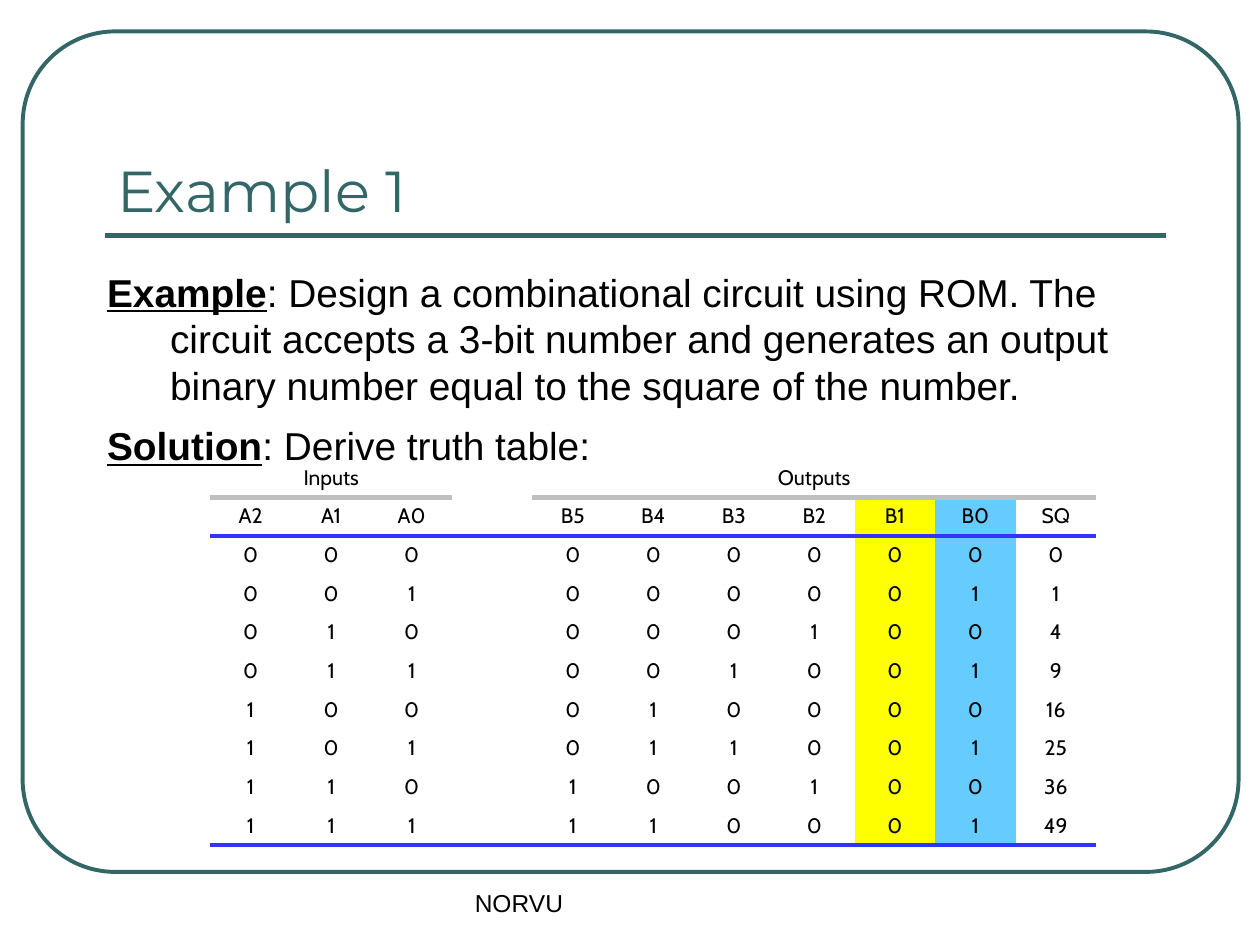
from lxml import etree
from pptx import Presentation
from pptx import util as u
from pptx.dml.color import RGBColor
from pptx.enum import shapes, text
from pptx.oxml import ns

TEAL, BLACK, BLUE, GREY = "336666", "000000", "3333FF", "C0C0C0"
COLUMN_FILLS = {8: "FFFF00", 9: "66CCFF"}
HEADINGS = ["A2", "A1", "A0", "", "B5", "B4", "B3", "B2", "B1", "B0", "SQ"]
BODY = [
    ("Example", ": Design a combinational circuit using ROM. The circuit accepts a 3-bit "
     "number and generates an output binary number equal to the square of the number."),
    ("Solution", ": Derive truth table:"),
]


def color(value):
    """Turn a hex string into a colour."""
    return RGBColor.from_string(value)


def apply_format(target, formats):
    """Set each attribute of a target from a dict."""
    for name, value in formats.items():
        setattr(target, name, value)


def place(shape, box):
    """Move a shape to a box given in inches."""
    names = ("left", "top", "width", "height")
    apply_format(shape, dict(zip(names, map(u.Inches, box))))


def add_run(paragraph, words, size, font, hex_color, **formats):
    """Add one formatted run to a paragraph."""
    run = paragraph.add_run()
    run.text = words
    apply_format(run.font, {"size": u.Pt(size), "name": font, **formats})
    run.font.color.rgb = color(hex_color)


def set_frame(shape, anchor):
    """Give a text shape wrapping, fixed size and an anchor."""
    apply_format(shape.text_frame, {
        "word_wrap": True, "auto_size": text.MSO_AUTO_SIZE.NONE, "vertical_anchor": anchor})
    return shape.text_frame


def add_backdrop(slide, box):
    """Draw the rounded frame and the rule under the title, behind the text."""
    frame = slide.shapes.add_shape(
        shapes.MSO_SHAPE.ROUNDED_RECTANGLE, *map(u.Inches, box))
    frame.adjustments[0] = 0.11
    frame.shadow.inherit = False
    frame.fill.background()
    left, top = box[0] + 0.65, box[1] + 1.62
    rule = slide.shapes.add_connector(
        shapes.MSO_CONNECTOR.STRAIGHT,
        *map(u.Inches, (left, top, left + 8.42, top)))
    etree.SubElement(rule._element.spPr, ns.qn("a:effectLst"))
    for index, (shape, width) in enumerate([(frame, 2.25), (rule, 3)]):
        shape.line.color.rgb = color(TEAL)
        shape.line.width = u.Pt(width)
        slide.shapes._spTree.insert(2 + index, shape._element)


def fill_title(slide, box):
    """Write the title in its placeholder."""
    place(slide.shapes.title, box)
    paragraph = set_frame(slide.shapes.title, text.MSO_ANCHOR.BOTTOM).paragraphs[0]
    paragraph.alignment = text.PP_ALIGN.LEFT
    add_run(paragraph, "Example 1", 33, "Montserrat", TEAL)


def fill_body(slide, box):
    """Write the problem and the solution with hanging indents."""
    body = slide.placeholders[1]
    place(body, box)
    frame = set_frame(body, text.MSO_ANCHOR.TOP)
    for index, (label, words) in enumerate(BODY):
        paragraph = frame.add_paragraph() if index else frame.paragraphs[0]
        paragraph.space_before = u.Pt(7.8)
        properties = paragraph._p.get_or_add_pPr()
        properties.set("marL", str(u.Inches(0.5)))
        properties.set("indent", str(u.Inches(-0.5)))
        etree.SubElement(properties, ns.qn("a:buNone"))
        add_run(paragraph, label, 22.2, "Arial", BLACK, bold=True, underline=True)
        add_run(paragraph, words, 22.2, "Arial", BLACK, bold=False, underline=False)


def add_border(cell, side, hex_color):
    """Set one side of a cell to a three-point border, or to none."""
    line = etree.SubElement(
        cell._tc.get_or_add_tcPr(), ns.qn("a:ln" + side), w=str(u.Pt(3)))
    if hex_color:
        fill = etree.SubElement(line, ns.qn("a:solidFill"))
        etree.SubElement(fill, ns.qn("a:srgbClr"), val=hex_color)
    else:
        etree.SubElement(line, ns.qn("a:noFill"))


def row_borders(row, column):
    """Give the border colours of a cell by side."""
    group_line = GREY if column != 3 else None
    rules = {0: {"B": group_line}, 1: {"T": group_line, "B": BLUE},
             2: {"T": BLUE}, 9: {"B": BLUE}}
    return {side: rules.get(row, {}).get(side) for side in "LRTB"}


def truth_rows():
    """List the table's rows, with the square of each three-bit number."""
    rows = [["Inputs", "", "", "", "Outputs"] + [""] * 6, HEADINGS]
    for number in range(8):
        square = number ** 2
        rows.append([*f"{number:03b}", "", *f"{square:06b}", str(square)])
    return rows


def format_cell(cell, words, row, column):
    """Write one cell with its borders and fill."""
    apply_format(cell, {"margin_left": u.Inches(0.17), "margin_right": u.Inches(0.17),
                        "margin_top": u.Inches(0.05), "margin_bottom": u.Inches(0.05)})
    paragraph = cell.text_frame.paragraphs[0]
    paragraph.alignment = text.PP_ALIGN.CENTER
    if words:
        add_run(paragraph, words, 12, "Cabin", BLACK)
    else:
        etree.SubElement(paragraph._p, ns.qn("a:endParaRPr"), sz="1200")
    for side, hex_color in row_borders(row, column).items():
        add_border(cell, side, hex_color)
    if row and column in COLUMN_FILLS:
        cell.fill.solid()
        cell.fill.fore_color.rgb = color(COLUMN_FILLS[column])
    else:
        cell.fill.background()


def add_truth_table(slide, box):
    """Add the truth table of the squaring circuit."""
    rows = truth_rows()
    table = slide.shapes.add_table(
        len(rows), len(HEADINGS), *map(u.Inches, box)).table
    apply_format(table, {"first_row": False, "horz_banding": False})
    style = table._tbl.tblPr.find(ns.qn("a:tableStyleId"))
    style.text = "{2D5ABB26-0587-4C30-8999-92F81FD0307C}"
    for row, values in enumerate(rows):
        for column, words in enumerate(values):
            format_cell(table.cell(row, column), words, row, column)
    for first, last in [(0, 2), (4, 10)]:
        table.cell(0, first).merge(table.cell(0, last))


def add_footer(slide, box):
    """Add the footer text."""
    footer = slide.shapes.add_textbox(*map(u.Inches, box))
    paragraph = set_frame(footer, text.MSO_ANCHOR.TOP).paragraphs[0]
    add_run(paragraph, "NORVU", 14, "Arial", BLACK)


def main():
    """Build and save the presentation."""
    presentation = Presentation()
    apply_format(presentation, {"slide_width": u.Inches(10), "slide_height": u.Inches(7.5)})
    slide = presentation.slides.add_slide(presentation.slide_layouts[1])
    add_backdrop(slide, (0.18, 0.25, 9.65, 6.67))
    fill_title(slide, (0.83, 0.58, 8.41, 1.25))
    fill_body(slide, (0.75, 2.08, 8.58, 1.42))
    add_truth_table(slide, (1.67, 3.64, 7.03, 3.07))
    add_footer(slide, (3.67, 7, 3.16, 0.5))
    presentation.save("out.pptx")


if __name__ == "__main__":
    main()
